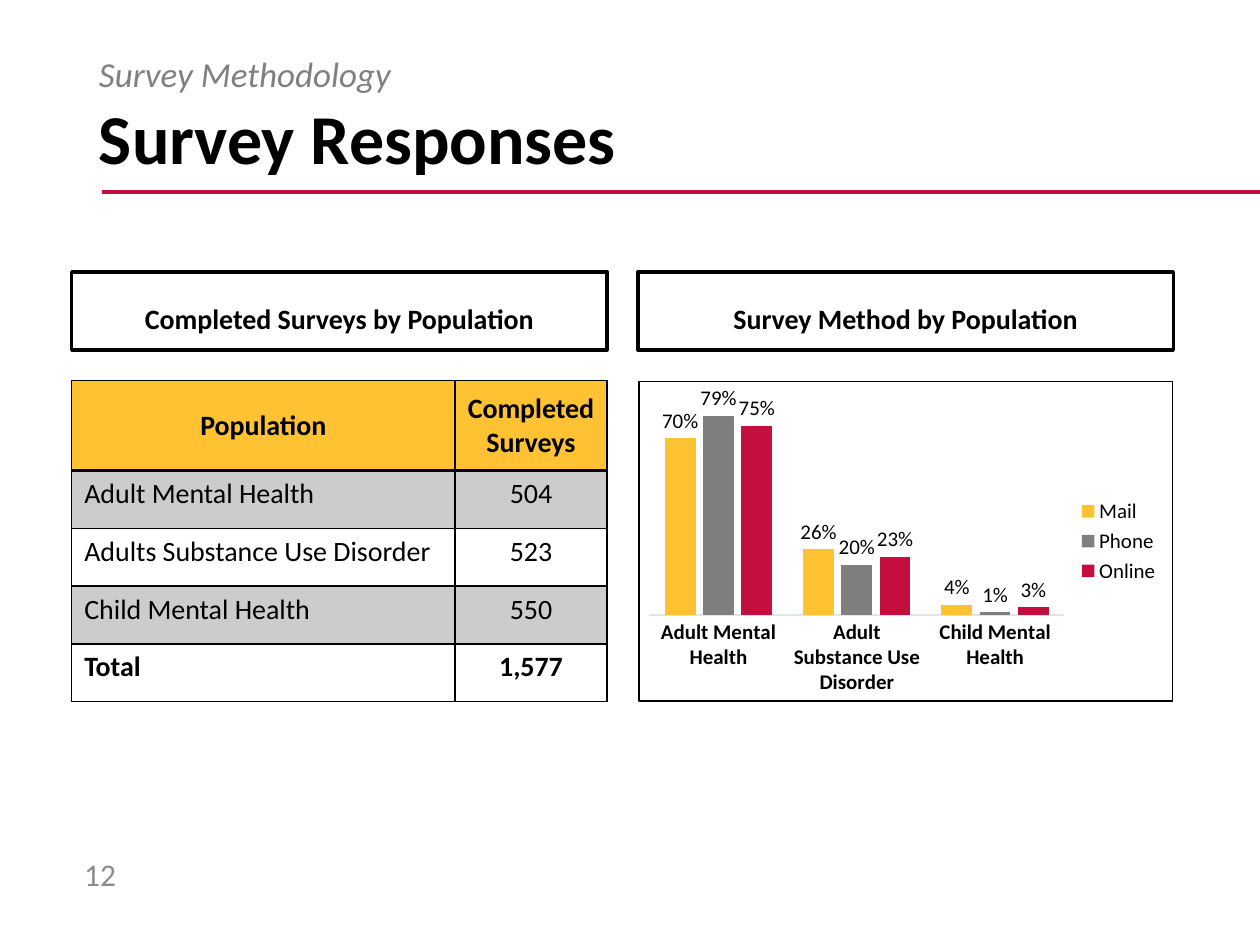
from dataclasses import dataclass

from lxml import etree
from pptx import Presentation
from pptx import util as u
from pptx.chart import data as chart_data
from pptx.dml import color
from pptx.enum import chart as chart_enum
from pptx.enum import shapes, text
from pptx.oxml import ns

Pt = u.Pt
CENTER, LEFT = text.PP_ALIGN.CENTER, text.PP_ALIGN.LEFT


@dataclass(frozen=True)
class Theme:
    font: str = "Calibri"
    black: str = "000000"
    white: str = "FFFFFF"
    gold: str = "FFC233"
    gray: str = "7F7F7F"
    red: str = "C40E3E"
    subtitle: str = "808080"
    number: str = "8C8C8C"
    axis: str = "E0E5EB"
    title_size: int = 40
    subtitle_size: int = 20
    number_size: int = 18
    body_size: int = 16
    chart_size: int = 12


theme = Theme()
rgb = color.RGBColor.from_string


def write(frame, words, size=theme.body_size, ink=theme.black, bold=False,
          italic=False, align=LEFT, anchor=text.MSO_ANCHOR.TOP, spacing=None):
    frame.word_wrap = True
    frame.vertical_anchor = anchor
    paragraph = frame.paragraphs[0]
    paragraph.alignment = align
    paragraph.line_spacing = spacing
    run = paragraph.add_run()
    run.text = words
    font = run.font
    font.name, font.size = theme.font, Pt(size)
    font.bold, font.italic = bold, italic
    font.color.rgb = rgb(ink)


def add_border(cell, side, width):
    properties = cell._tc.get_or_add_tcPr()
    line = etree.SubElement(properties, ns.qn(f"a:ln{side}"), w=str(Pt(width)))
    fill = etree.SubElement(line, ns.qn("a:solidFill"))
    etree.SubElement(fill, ns.qn("a:srgbClr"), val=theme.black)


presentation = Presentation()
presentation.slide_width, presentation.slide_height = Pt(720), Pt(540)
slide = presentation.slides.add_slide(presentation.slide_layouts[6])

# Rule under the title
rule = slide.shapes.add_connector(
    shapes.MSO_CONNECTOR.STRAIGHT, Pt(58.3), Pt(109.5), Pt(720), Pt(109.5))
rule.line.color.rgb = rgb(theme.red)
rule.line.width = Pt(2.25)
etree.SubElement(rule._element.spPr, ns.qn("a:effectLst"))

# Title, section name and slide number
middle = text.MSO_ANCHOR.MIDDLE
for words, box, style in (
    ("Survey Responses", (49.5, 29, 621, 104),
     dict(size=theme.title_size, bold=True, anchor=middle, spacing=0.9)),
    ("Survey Methodology", (49.5, 29, 621, 35),
     dict(size=theme.subtitle_size, ink=theme.subtitle, italic=True, spacing=0.9)),
    ("12", (41, 485, 40, 29),
     dict(size=theme.number_size, ink=theme.number, anchor=middle)),
):
    text_box = slide.shapes.add_textbox(*map(Pt, box))
    write(text_box.text_frame, words, **style)

# Panel headings
columns = (41, 364.5)
panel_width, panel_top, panel_height = 306, 217.5, 183.5
headings = ("Completed Surveys by Population", "Survey Method by Population")
for left, heading in zip(columns, headings):
    panel = slide.shapes.add_shape(
        shapes.MSO_SHAPE.RECTANGLE, Pt(left), Pt(155.5), Pt(panel_width), Pt(44.5))
    panel.shadow.inherit = False
    panel.fill.solid()
    panel.fill.fore_color.rgb = rgb(theme.white)
    panel.line.color.rgb = rgb(theme.black)
    panel.line.width = Pt(2)
    frame = panel.text_frame
    frame.margin_left = frame.margin_right = Pt(4.5)
    frame.margin_top, frame.margin_bottom = Pt(17), Pt(2)
    write(frame, heading, bold=True, align=CENTER)

# Table of completed surveys
rows = (
    ("Population", "Completed Surveys"),
    ("Adult Mental Health", "504"),
    ("Adults Substance Use Disorder", "523"),
    ("Child Mental Health", "550"),
    ("Total", "1,577"),
)
table = slide.shapes.add_table(
    len(rows), 2, Pt(columns[0]), Pt(panel_top), Pt(panel_width), Pt(panel_height)).table
table.first_row = table.horz_banding = False
for column, width in zip(table.columns, (219, 87)):
    column.width = Pt(width)
for row_index, row in enumerate(rows):
    header, total = row_index == 0, row_index == len(rows) - 1
    table.rows[row_index].height = Pt(51.5 if header else 33)
    for column_index, words in enumerate(row):
        cell = table.cell(row_index, column_index)
        for side in "LRTB":
            heavy = (row_index, side) in ((0, "B"), (1, "T"))
            add_border(cell, side, 2 if heavy else 1)
        if header or row_index % 2:
            cell.fill.solid()
            cell.fill.fore_color.rgb = rgb(theme.gold if header else theme.black)
            if not header:
                tint = cell._tc.tcPr.find(".//" + ns.qn("a:solidFill") + "[last()]")
                tint = cell._tc.tcPr.findall(ns.qn("a:solidFill"))[0]
                etree.SubElement(tint[0], ns.qn("a:alpha"), val="20000")
        else:
            cell.fill.background()
        cell.vertical_anchor = middle if header else text.MSO_ANCHOR.TOP
        write(cell.text_frame, words, bold=header or total,
              align=CENTER if header or column_index else LEFT,
              anchor=None)

# Chart of survey methods
series_rows = (
    ("Mail", (0.70, 0.26, 0.04), theme.gold),
    ("Phone", (0.79, 0.20, 0.01), theme.gray),
    ("Online", (0.75, 0.23, 0.03), theme.red),
)
data = chart_data.CategoryChartData(number_format="0%")
data.categories = (
    "Adult Mental Health", "Adult Substance Use Disorder", "Child Mental Health")
for name, values, _ in series_rows:
    data.add_series(name, values)
chart = slide.shapes.add_chart(
    chart_enum.XL_CHART_TYPE.COLUMN_CLUSTERED, Pt(columns[1]), Pt(panel_top),
    Pt(panel_width), Pt(panel_height), data).chart
chart.has_title = False
chart.font.name, chart.font.size = theme.font, Pt(theme.chart_size)
chart.font.color.rgb = rgb(theme.black)
chart.has_legend = True
chart.legend.position = chart_enum.XL_LEGEND_POSITION.RIGHT
chart.legend.include_in_layout = False

category_axis, value_axis = chart.category_axis, chart.value_axis
category_axis.major_tick_mark = chart_enum.XL_TICK_MARK.NONE
category_axis.tick_labels.font.bold = True
category_axis.tick_labels.font.size = Pt(theme.chart_size)
category_axis.format.line.color.rgb = rgb(theme.axis)
category_axis.format.line.width = Pt(0.75)
value_axis.visible = False
value_axis.has_major_gridlines = False
value_axis.minimum_scale, value_axis.maximum_scale = 0, 0.9

plot = chart.plots[0]
plot.gap_width, plot.overlap = 100, -24
plot.vary_by_categories = False
plot.has_data_labels = True
labels = plot.data_labels
labels.show_value = True
labels.number_format, labels.number_format_is_linked = "0%", False
labels.position = chart_enum.XL_LABEL_POSITION.OUTSIDE_END
labels.font.size = Pt(theme.chart_size)
for series, (_, _, ink) in zip(plot.series, series_rows):
    series.format.fill.solid()
    series.format.fill.fore_color.rgb = rgb(ink)

# Chart frame
chart_space = chart._chartSpace
frame_format = etree.Element(ns.qn("c:spPr"))
etree.SubElement(frame_format, ns.qn("a:noFill"))
outline = etree.SubElement(frame_format, ns.qn("a:ln"), w=str(Pt(1)))
outline_fill = etree.SubElement(outline, ns.qn("a:solidFill"))
etree.SubElement(outline_fill, ns.qn("a:srgbClr"), val=theme.black)
chart_space.find(ns.qn("c:chart")).addnext(frame_format)

presentation.save("out.pptx")
